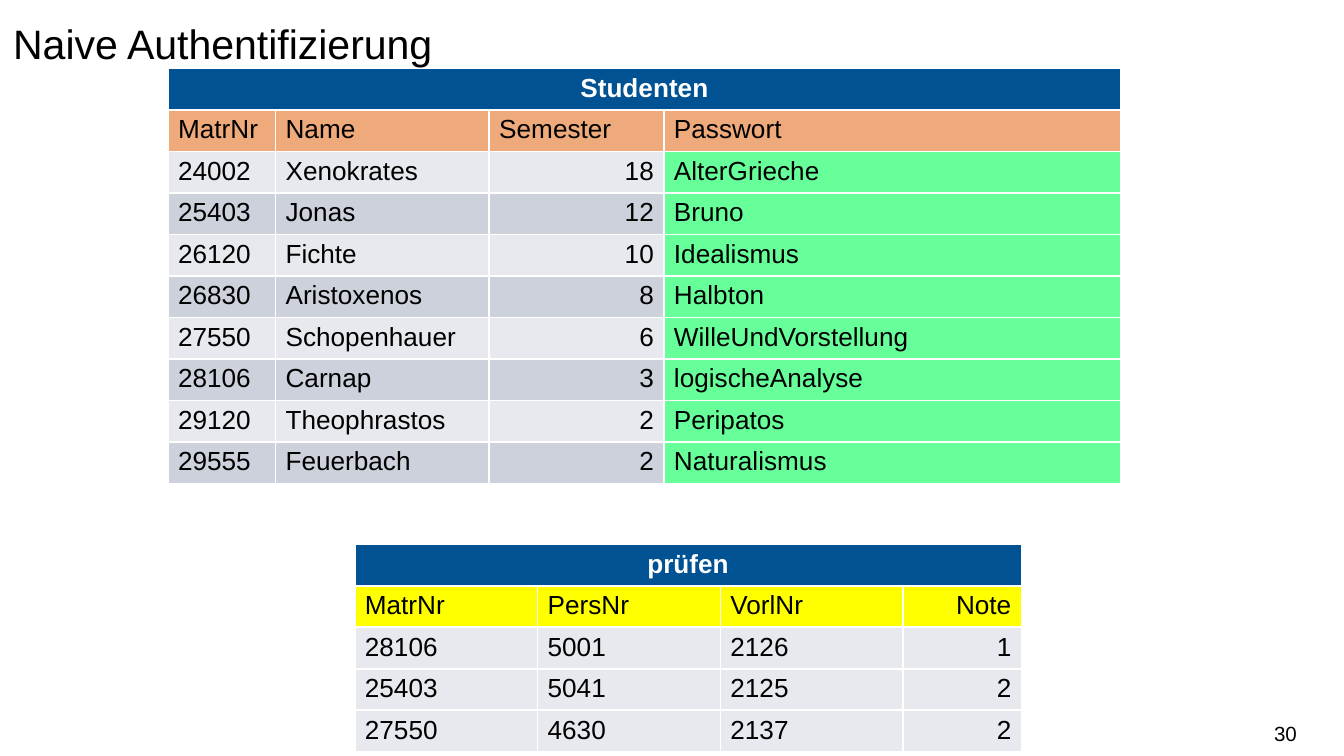
from dataclasses import dataclass

from pptx import Presentation
from pptx.dml.color import RGBColor
from pptx.enum.text import MSO_ANCHOR as Anchor, PP_ALIGN as Align
from pptx.util import Inches, Pt

FONT = "Arial"
BLACK, WHITE, BLUE = "000000", "FFFFFF", "005293"
LIGHT, DARK = "E7E9EE", "CCD1DC"
ORANGE, YELLOW, GREEN = "EEAA7A", "FFFF00", "66FF99"
ROW_HEIGHT = 0.91 / 3
MARGIN_SCALE = 0.75  # cell margins relative to the usual 0.1 and 0.05


@dataclass
class Relation:
    name: str
    left: float
    top: float
    widths: list[float]
    head_fill: str
    right_col: int  # column aligned to the right
    bands: list[str]  # row fills, used in turn
    col_fills: dict[int, str]  # fills that replace the bands
    rows: list[str]  # the first row holds the attribute names


RELATIONS = [
    Relation("prüfen", 2.64, 4.05, [1.36, 1.36, 1.36, 0.88], YELLOW, 3, [LIGHT], {}, [
        "MatrNr PersNr VorlNr Note",
        "28106 5001 2126 1",
        "25403 5041 2125 2",
        "27550 4630 2137 2",
    ]),
    Relation("Studenten", 1.25, 0.51, [0.8, 1.59, 1.3, 3.4], ORANGE, 2,
             [LIGHT, DARK], {3: GREEN}, [
        "MatrNr Name Semester Passwort",
        "24002 Xenokrates 18 AlterGrieche",
        "25403 Jonas 12 Bruno",
        "26120 Fichte 10 Idealismus",
        "26830 Aristoxenos 8 Halbton",
        "27550 Schopenhauer 6 WilleUndVorstellung",
        "28106 Carnap 3 logischeAnalyse",
        "29120 Theophrastos 2 Peripatos",
        "29555 Feuerbach 2 Naturalismus",
    ]),
]


def rgb(color: str) -> RGBColor:
    return RGBColor.from_string(color)


def style(p, size: float, color: str = BLACK, bold: bool = False, align=Align.LEFT) -> None:
    p.alignment = align
    p.font.name, p.font.size, p.font.bold = FONT, Pt(size), bold
    p.font.color.rgb = rgb(color)


def fill_cell(cell, fill: str, text: str = "", color: str = BLACK, bold: bool = False,
              align=Align.LEFT) -> None:
    cell.margin_left = cell.margin_right = Inches(0.1 * MARGIN_SCALE)
    cell.margin_top = cell.margin_bottom = Inches(0.05 * MARGIN_SCALE)
    cell.fill.solid()
    cell.fill.fore_color.rgb = rgb(fill)
    cell.text = text
    style(cell.text_frame.paragraphs[0], 14, color, bold, align)


def add_relation(s, rel: Relation) -> None:
    n_rows, n_cols = len(rel.rows) + 1, len(rel.widths)
    # The default table style supplies the white borders
    table = s.shapes.add_table(
        n_rows, n_cols, Inches(rel.left), Inches(rel.top),
        Inches(sum(rel.widths)), Inches(n_rows * ROW_HEIGHT)).table
    for col, width in zip(table.columns, rel.widths):
        col.width = Inches(width)
    for row in table.rows:
        row.height = Inches(ROW_HEIGHT)

    # Name of the relation across all columns
    table.cell(0, 0).merge(table.cell(0, n_cols - 1))
    fill_cell(table.cell(0, 0), BLUE, rel.name, WHITE, True, Align.CENTER)

    # Attribute names and tuples
    for r, line in enumerate(rel.rows):
        for c, value in enumerate(line.split()):
            band = rel.bands[(r - 1) % len(rel.bands)]
            fill = rel.col_fills.get(c, band) if r else rel.head_fill
            numeric = c == rel.right_col and (r > 0 or value == "Note")
            fill_cell(table.cell(r + 1, c), fill, value,
                      align=Align.RIGHT if numeric else Align.LEFT)


def add_text(s, text: str, box: tuple[float, float, float, float], size: float,
             align=Align.LEFT, anchor=Anchor.TOP, side: float = 0.1):
    tf = s.shapes.add_textbox(*map(Inches, box)).text_frame
    tf.word_wrap = True
    tf.vertical_anchor = anchor
    tf.margin_left = tf.margin_right = Inches(side)
    p = tf.paragraphs[0]
    p.text = text
    style(p, size, align=align)
    return p


def main() -> None:
    prs = Presentation()
    prs.slide_width, prs.slide_height = Inches(10), Inches(10 * 9 / 16)
    s = prs.slides.add_slide(prs.slide_layouts[6])

    # Title
    title = add_text(s, "Naive Authentifizierung", (0, 0, 10, 0.94), 22)
    title.line_spacing = 1.25

    # Tables
    for rel in RELATIONS:
        add_relation(s, rel)

    # Slide number
    add_text(s, "30", (7.41, 5.31, 2.24, 0.3), 11, Align.RIGHT, Anchor.MIDDLE, 0)

    prs.save("out.pptx")


if __name__ == "__main__":
    main()
